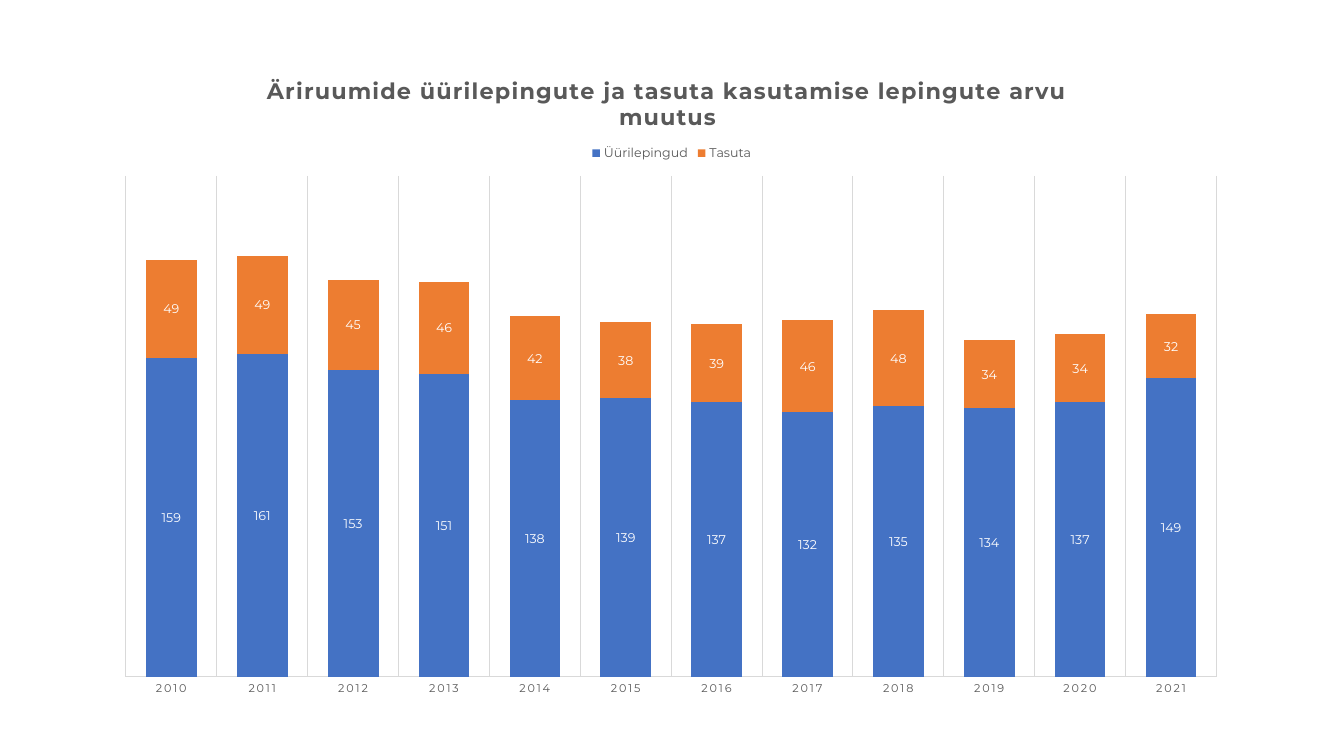
from pptx import Presentation
from pptx.chart import data as chart_data
from pptx.dml.color import RGBColor
from pptx.enum import chart as kinds
from pptx.oxml import parse_xml
from pptx.oxml import ns
from pptx.util import Pt

BLUE = RGBColor(0x44, 0x72, 0xC4)
ORANGE = RGBColor(0xED, 0x7D, 0x31)
GREY = RGBColor(0x59, 0x59, 0x59)
LIGHT_GREY = RGBColor(0xD9, 0xD9, 0xD9)
WHITE = RGBColor(0xFF, 0xFF, 0xFF)
BLACK = RGBColor(0, 0, 0)

YEARS = [str(year) for year in range(2010, 2022)]
CONTRACTS = [
    ("Üürilepingud", BLUE, [159, 161, 153, 151, 138, 139, 137, 132, 135, 134, 137, 149]),
    ("Tasuta", ORANGE, [49, 49, 45, 46, 42, 38, 39, 46, 48, 34, 34, 32]),
]
HEADING = "Äriruumide üürilepingute ja tasuta kasutamise lepingute arvu muutus"


class ChartSlide:
    font_name = "Montserrat"

    def __init__(self, slide):
        self.slide = slide

    def style(self, font, size, color, bold=False):
        font.name = self.font_name
        font.size = Pt(size)
        font.bold = bold
        font.color.rgb = color

    def place(self, part, index, **fractions):
        """Give a chart part a manual layout, in fractions of the chart."""
        for automatic in part.findall(ns.qn("c:layout")):
            part.remove(automatic)
        target = '<c:layoutTarget val="inner"/>' if part.tag == ns.qn("c:plotArea") else ""
        modes = "".join(f'<c:{axis}Mode val="edge"/>' for axis in "xy")
        sizes = "".join(f'<c:{key} val="{value}"/>' for key, value in fractions.items())
        part.insert(index, parse_xml(
            f'<c:layout {ns.nsdecls("c")}><c:manualLayout>{target}{modes}{sizes}'
            "</c:manualLayout></c:layout>"))

    def stacked_columns(self, left, top, width, height, categories, contracts):
        table = chart_data.CategoryChartData(number_format="0")
        table.categories = categories
        for name, _, counts in contracts:
            table.add_series(name, counts)
        chart = self.slide.shapes.add_chart(
            kinds.XL_CHART_TYPE.COLUMN_STACKED,
            Pt(left), Pt(top), Pt(width), Pt(height), table).chart
        self.style(chart.font, 10, BLACK)
        columns = chart.plots[0]
        columns.gap_width, columns.overlap = 79, 100
        columns.vary_by_categories = False
        for series, (_, color, _) in zip(columns.series, contracts):
            series.format.fill.solid()
            series.format.fill.fore_color.rgb = color
            labels = series.data_labels
            labels.show_value = True
            labels.number_format, labels.number_format_is_linked = "0", False
            labels.position = kinds.XL_LABEL_POSITION.CENTER
            self.style(labels.font, 9, WHITE)
        self.place(chart.element.xpath("c:chart/c:plotArea")[0], 0,
                   x=0.0195, y=0.1945, w=0.96, h=0.7575)
        return chart

    def axes(self, chart, maximum):
        counts = chart.value_axis
        counts.minimum_scale, counts.maximum_scale = 0, maximum
        counts.has_major_gridlines = False
        counts.tick_labels.number_format = "#,##0"
        counts.tick_labels.number_format_is_linked = False
        counts.visible = False
        years = chart.category_axis
        years.has_major_gridlines = True
        years.major_tick_mark = years.minor_tick_mark = kinds.XL_TICK_MARK.NONE
        for line in (years.format.line, years.major_gridlines.format.line):
            line.color.rgb = LIGHT_GREY
            line.width = Pt(0.75)
        self.style(years.tick_labels.font, 8, GREY)
        for properties in chart.element.xpath(".//c:catAx/c:txPr//a:defRPr"):
            properties.set("spc", "120")

    def heading(self, chart, wording):
        chart.has_title = True
        title = chart.chart_title
        title.include_in_layout = False
        run = title.text_frame.paragraphs[0].add_run()
        run.text = wording
        self.style(run.font, 16, GREY, bold=True)
        for properties in title.element.xpath(".//a:r/a:rPr"):
            properties.set("spc", "100")
        self.place(title.element, 1, x=0.14, y=0.037)

    def legend(self, chart):
        chart.has_legend = True
        chart.legend.position = kinds.XL_LEGEND_POSITION.TOP
        chart.legend.include_in_layout = False
        self.style(chart.legend.font, 9, GREY)
        self.place(chart.element.xpath("c:chart/c:legend")[0], 1,
                   x=0.425, y=0.14, w=0.15, h=0.04)


def main():
    deck = Presentation()
    deck.slide_width, deck.slide_height = Pt(960), Pt(540)
    page = ChartSlide(deck.slides.add_slide(deck.slide_layouts[6]))
    chart = page.stacked_columns(74.16, 33.84, 811.44, 472.32, YEARS, CONTRACTS)
    page.axes(chart, 250)
    page.heading(chart, HEADING)
    page.legend(chart)
    deck.save("out.pptx")


if __name__ == "__main__":
    main()
